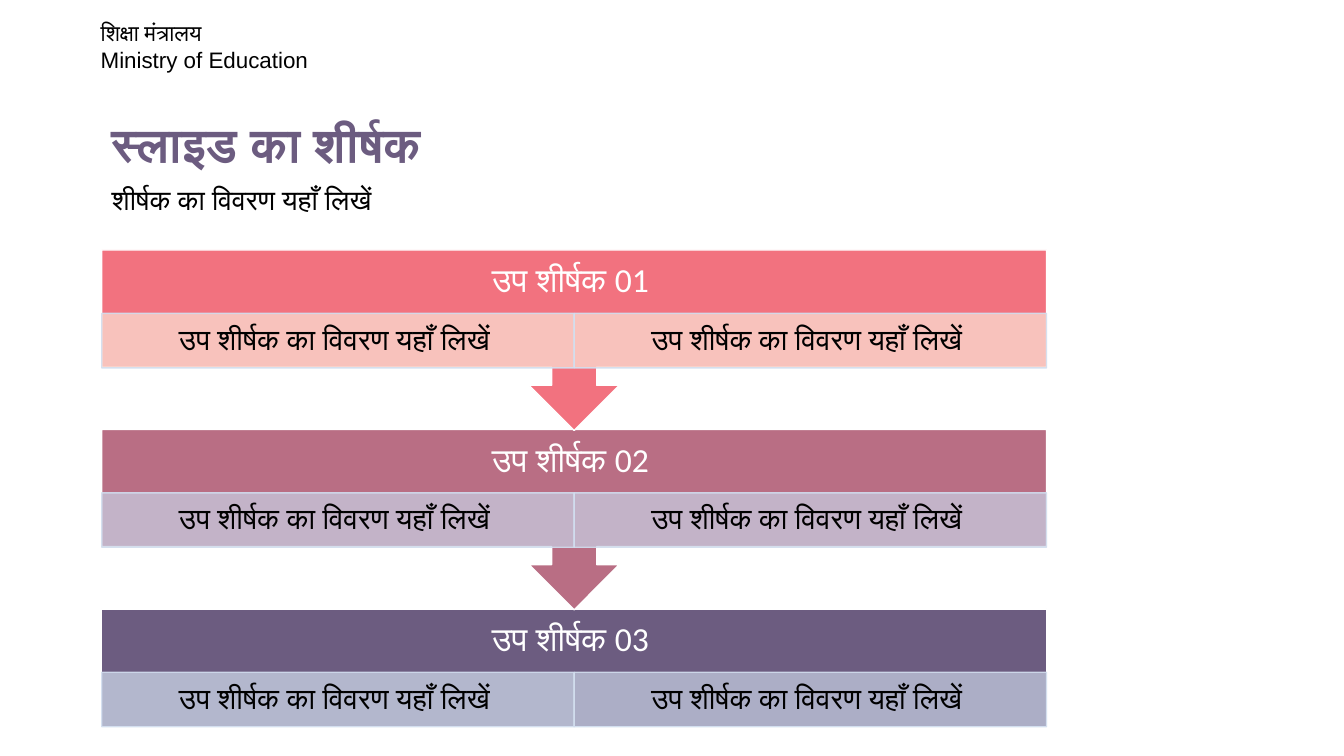
from lxml import etree
from pptx import Presentation
from pptx.dml.color import RGBColor
from pptx.enum.shapes import MSO_SHAPE
from pptx.enum.text import MSO_ANCHOR, PP_ALIGN
from pptx.oxml.ns import qn
from pptx.util import Inches, Pt

RECTANGLE = MSO_SHAPE.RECTANGLE
DOWN_CALLOUT = MSO_SHAPE.DOWN_ARROW_CALLOUT
TOP, MIDDLE = MSO_ANCHOR.TOP, MSO_ANCHOR.MIDDLE
LEFT, CENTER = PP_ALIGN.LEFT, PP_ALIGN.CENTER

COLORS = {
    "black": "000000",
    "white": "FFFFFF",
    "purple": "6C5C80",
    "mauve": "B96E84",
    "coral": "F2727F",
    "peach": "FBE5D6",
    "mist": "C8D1E5",
    "sky": "D2DEEF",
}

STEPS = [
    ("उप शीर्षक 01 ", DOWN_CALLOUT, "coral", ("peach", "peach")),
    ("उप शीर्षक 02 ", DOWN_CALLOUT, "mauve", ("mist", "mist")),
    ("उप शीर्षक 03 ", RECTANGLE, "purple", ("sky", "mist")),
]
DETAIL = "उप शीर्षक का विवरण यहाँ लिखें "

FLOW_LEFT, FLOW_TOP, FLOW_WIDTH = 1.01, 2.48, 9.37
STEP_PITCH = 1.78
HEADING_HEIGHT, DETAIL_HEIGHT = 0.63, 0.54
STEP_HEIGHTS = {DOWN_CALLOUT: 1.79, RECTANGLE: 1.17}


class SlideBuilder:
    def __init__(self, slide, font="Calibri"):
        self.slide = slide
        self.font = font

    def color(self, name):
        return RGBColor.from_string(COLORS[name])

    def set_alpha(self, fill, percent):
        alpha = etree.SubElement(fill.find(".//" + qn("a:srgbClr")), qn("a:alpha"))
        alpha.set("val", str(percent * 1000))

    def set_text(self, shape, text, size, color="black", font=None, bold=False,
                 align=LEFT, anchor=TOP, insets=(0.1, 0.05), spacing=0.9):
        frame = shape.text_frame
        frame.word_wrap = True
        frame.vertical_anchor = anchor
        frame.margin_left = frame.margin_right = Inches(insets[0])
        frame.margin_top = frame.margin_bottom = Inches(insets[1])
        frame.text = text
        for paragraph in frame.paragraphs:
            paragraph.alignment = align
            paragraph.line_spacing = spacing
            for run in paragraph.runs:
                run.font.name = font or self.font
                run.font.size = Pt(size)
                run.font.bold = bold
                run.font.color.rgb = self.color(color)

    def text(self, box, text, size, **style):
        label = self.slide.shapes.add_textbox(*map(Inches, box))
        self.set_text(label, text, size, **style)

    def shape(self, kind, box, fill, line, fill_alpha=100, line_alpha=100):
        shape = self.slide.shapes.add_shape(kind, *map(Inches, box))
        shape.shadow.inherit = False
        shape.fill.solid()
        shape.fill.fore_color.rgb = self.color(fill)
        shape.line.color.rgb = self.color(line)
        shape.line.width = Pt(1)
        properties = shape.element.spPr
        if fill_alpha < 100:
            self.set_alpha(properties.find(qn("a:solidFill")), fill_alpha)
        if line_alpha < 100:
            self.set_alpha(properties.find(qn("a:ln")), line_alpha)
        return shape

    def step(self, top, heading, kind, color, detail_colors):
        self.shape(kind, (FLOW_LEFT, top, FLOW_WIDTH, STEP_HEIGHTS[kind]), color, "white")
        self.text((FLOW_LEFT, top, FLOW_WIDTH, HEADING_HEIGHT), heading, 24,
                  color="white", align=CENTER, anchor=MIDDLE, insets=(0.19, 0.19))
        width = FLOW_WIDTH / len(detail_colors)
        for column, detail_color in enumerate(detail_colors):
            box = (FLOW_LEFT + column * width, top + HEADING_HEIGHT, width, DETAIL_HEIGHT)
            detail = self.shape(RECTANGLE, box, detail_color, "sky", 70, 90)
            self.set_text(detail, DETAIL, 21, align=CENTER, anchor=MIDDLE, insets=(0.16, 0.03))


def main():
    presentation = Presentation()
    presentation.slide_width = Inches(13.33)
    presentation.slide_height = Inches(7.5)
    builder = SlideBuilder(presentation.slides.add_slide(presentation.slide_layouts[6]))

    builder.text((0.9, 0.14, 5.19, 0.64), "शिक्षा मंत्रालय\nMinistry of Education", 16,
                 font="Arial", spacing=1.0)
    builder.text((1.01, 1.16, 6.13, 0.47), "स्लाइड का शीर्षक", 34,
                 color="purple", font="Arial", bold=True)
    builder.text((1.01, 1.8, 7.19, 0.37), "शीर्षक का विवरण यहाँ लिखें", 20)

    for index, step in reversed(list(enumerate(STEPS))):
        builder.step(FLOW_TOP + index * STEP_PITCH, *step)

    presentation.save("out.pptx")


if __name__ == "__main__":
    main()
